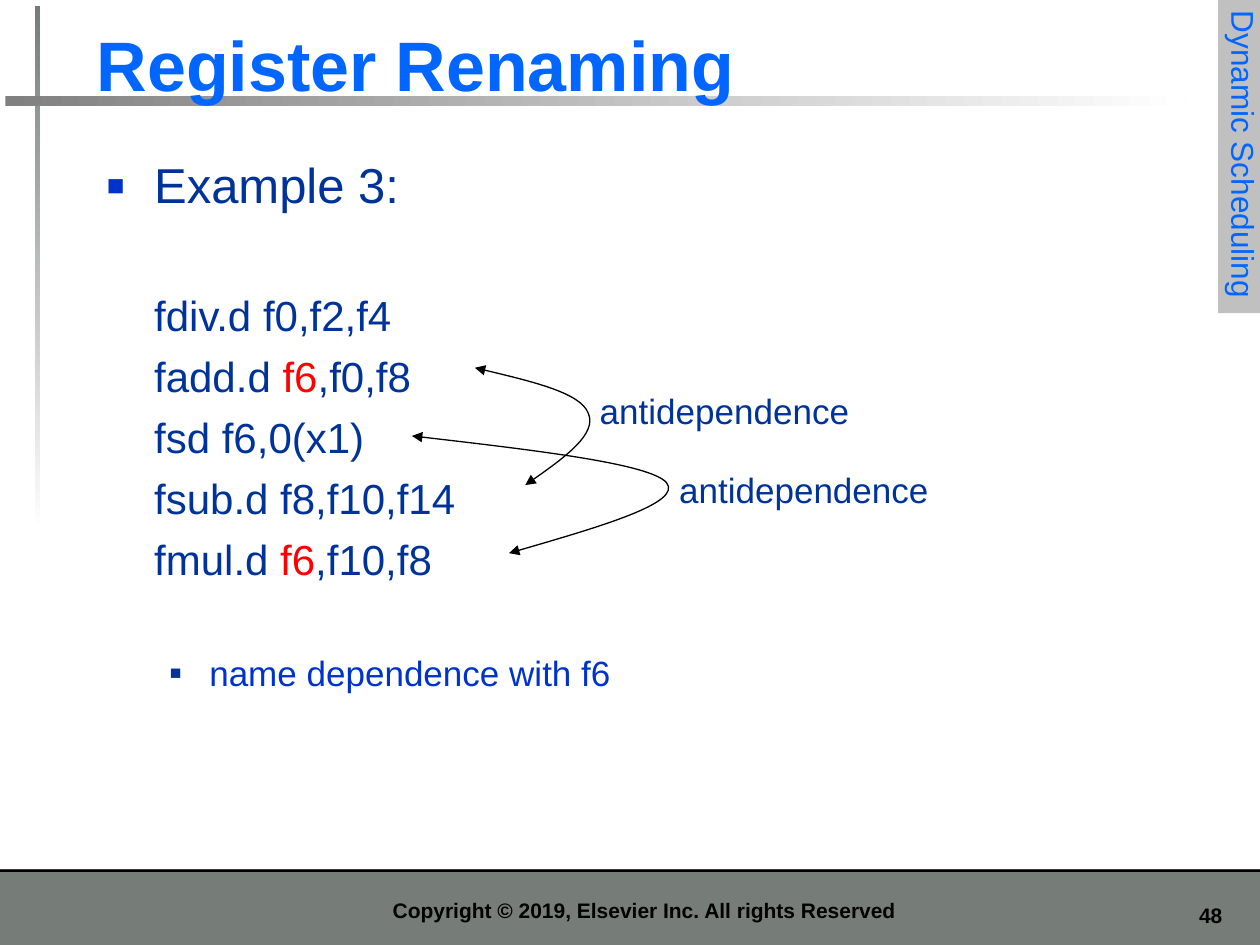
from lxml import etree
from pptx import Presentation
from pptx.dml.color import RGBColor
from pptx.enum.shapes import MSO_SHAPE
from pptx.enum.text import MSO_ANCHOR, PP_ALIGN
from pptx.oxml.ns import qn
from pptx.util import Pt

RECT = MSO_SHAPE.RECTANGLE
TOP, BASE = MSO_ANCHOR.TOP, MSO_ANCHOR.BOTTOM
LEFT, MID, RIGHT = PP_ALIGN.LEFT, PP_ALIGN.CENTER, PP_ALIGN.RIGHT
NAVY, BLUE, SKY, RED = "003399", "0033CC", "0066FF", "FF0000"
BLACK, GRAY = "000000", "767D79"

BARS = [
    ((0, 496.8, 720, 43.2), GRAY, None),
    ((0, 496.8, 720, 1.5), BLACK, None),
    ((20, 3.6, 3, 300), GRAY, 270),
    ((3, 54.8, 674.5, 5.6), "808080", 0),
]
LABELS = [
    ("48", (660.2, 512, 45.4, 21.6), 12, BLACK, True, RIGHT, TOP),
    ("Copyright © 2019, Elsevier Inc. All rights Reserved",
     (82.1, 502.6, 572.4, 28.1), 12, BLACK, True, MID, BASE),
    ("Register Renaming", (48.2, 8.6, 652.3, 55.4), 40, SKY, True, LEFT, BASE),
    ("antidependence", (331.9, 218.9, 164.2, 31.7), 20, NAVY, False, MID, TOP),
    ("antidependence", (377.3, 264.2, 164.2, 31.7), 20, NAVY, False, MID, TOP),
]
CODE = [
    [("fdiv.d f0,f2,f4", NAVY)],
    [("fadd.d ", NAVY), ("f6", RED), (",f0,f8", NAVY)],
    [("fsd f6,0(x1)", NAVY)],
    [("fsub.d f8,f10,f14", NAVY)],
    [("fmul.d ", NAVY), ("f6", RED), (",f10,f8", NAVY)],
]
CURVES = [
    [(271.4, 210.2), (301.7, 217.4), (331.9, 224.6), (336.2, 236.2),
     (341.3, 247.7), (321.1, 262.8), (300.2, 277.2)],
    [(235.4, 249.1), (303.1, 257), (371.5, 265), (380.9, 275.8),
     (390.2, 287.3), (340.6, 301.7), (290.9, 316.1)],
]


def color(code):
    return RGBColor.from_string(code)


def style(font, size, code, bold=False):
    font.name, font.size, font.bold = "Arial", Pt(size), bold
    font.color.rgb = color(code)


def add_bar(slide, box, code, angle):
    bar = slide.shapes.add_shape(RECT, *map(Pt, box))
    bar.shadow.inherit = False
    bar.line.fill.background()
    if angle is None:
        bar.fill.solid()
        bar.fill.fore_color.rgb = color(code)
        return
    bar.fill.gradient()
    bar.fill.gradient_angle = angle
    for stop, tone, place in zip(bar.fill.gradient_stops, (code, "FFFFFF"), (0, 1)):
        stop.color.rgb = color(tone)
        stop.position = place


def add_label(slide, text, box, size, code, bold, align, anchor):
    label = slide.shapes.add_textbox(*map(Pt, box))
    frame = label.text_frame
    frame.word_wrap = True
    frame.vertical_anchor = anchor
    frame.text = text
    para = frame.paragraphs[0]
    para.alignment = align
    style(para.runs[0].font, size, code, bold)
    return label


def add_line(frame, parts, size, left, hang=0, before=0, bullet=None):
    para = frame.paragraphs[0]
    if para.runs:
        para = frame.add_paragraph()
    props = para._p.get_or_add_pPr()
    props.set("marL", str(Pt(left)))
    props.set("indent", str(Pt(-hang)))
    if bullet:
        code, scale = bullet
        tint = etree.SubElement(props, qn("a:buClr"))
        etree.SubElement(tint, qn("a:srgbClr"), val=code)
        etree.SubElement(props, qn("a:buSzPct"), val=str(scale * 1000))
        etree.SubElement(props, qn("a:buFont"), typeface="Arial")
        etree.SubElement(props, qn("a:buChar"), char="■")
    if before:
        para.space_before = Pt(before)
    for text, code in parts:
        run = para.add_run()
        run.text = text
        style(run.font, size, code)
    return para


def add_body(slide):
    frame = slide.shapes.add_textbox(Pt(54), Pt(88.6), Pt(651.6), Pt(402.5)).text_frame
    frame.word_wrap = True
    head = add_line(frame, [("Example 3:", NAVY)], 28, 27, 27, bullet=(BLUE, 60))
    head.line_spacing = 0.9
    for i, parts in enumerate(CODE):
        add_line(frame, parts, 24, 27, before=6 if i else 43)
    add_line(frame, [("name dependence with f6", BLUE)], 20, 58.5, 22.5, 39, (NAVY, 55))


def add_curve(slide, points):
    spots = [(Pt(x), Pt(y)) for x, y in points]
    pen = slide.shapes.build_freeform(*spots[0])
    pen.add_line_segments(spots[1:], close=False)
    curve = pen.convert_to_shape()
    curve.shadow.inherit = False
    curve.fill.background()
    curve.line.width = Pt(0.75)
    curve.line.color.rgb = color(BLACK)
    steps = list(curve._element.iter(qn("a:lnTo")))
    for i in range(0, len(steps), 3):
        bend = etree.Element(qn("a:cubicBezTo"))
        steps[i].addprevious(bend)
        for step in steps[i:i + 3]:
            bend.append(step[0])
            step.getparent().remove(step)
    line = curve.line._get_or_add_ln()
    for end in ("a:headEnd", "a:tailEnd"):
        etree.SubElement(line, qn(end), type="triangle")


def main():
    deck = Presentation()
    deck.slide_width, deck.slide_height = Pt(720), Pt(540)
    slide = deck.slides.add_slide(deck.slide_layouts[6])
    for bar in BARS:
        add_bar(slide, *bar)
    for label in LABELS:
        add_label(slide, *label)
    add_body(slide)
    for points in CURVES:
        add_curve(slide, points)
    tab = add_label(slide, "Dynamic Scheduling", (620.6, 74.5, 180, 29),
                    18, SKY, False, LEFT, TOP)
    tab.text_frame.word_wrap = False
    tab.rotation = 90
    tab.fill.solid()
    tab.fill.fore_color.rgb = color("C0C0C0")
    deck.save("out.pptx")


if __name__ == "__main__":
    main()
